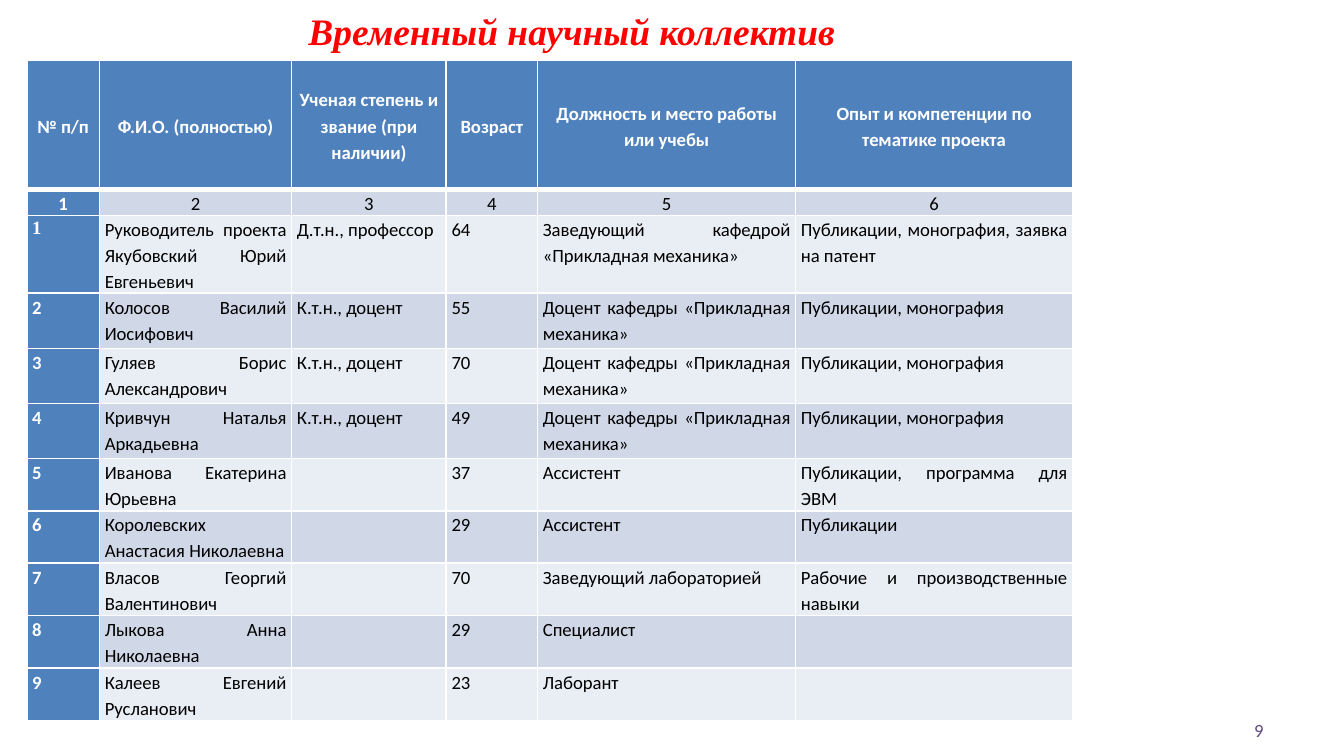
"""Build the slide that lists the members of a temporary research team."""
import pptx
import pptx.dml.color
import pptx.enum.text
import pptx.oxml
import pptx.oxml.ns
import pptx.util
from pptx.util import Inches

ALIGN = pptx.enum.text.PP_ALIGN
MIDDLE = pptx.enum.text.MSO_ANCHOR.MIDDLE
TOP = pptx.enum.text.MSO_ANCHOR.TOP
WHITE, BLACK, RED, PURPLE = "FFFFFF", "000000", "FF0000", "604A7B"
BLUE = "4F81BD"
BANDS = ["E9EDF4", "D0D8E8"]

SLIDE_WIDTH = 10
SLIDE_HEIGHT = SLIDE_WIDTH * 9 / 16
COLUMN_WIDTHS = [0.54, 1.43, 1.15, 0.68, 1.92, 2.06]
ROW_HEIGHTS = [0.96, 0.19, 0.58] + [0.41] * 3 + [0.39] * 5
HEADINGS = [
    "№ п/п",
    "Ф.И.О. (полностью)",
    "Ученая степень и звание (при наличии)",
    "Возраст",
    "Должность и место работы или учебы",
    "Опыт и компетенции по тематике проекта",
]
ASSOCIATE = "Доцент кафедры «Прикладная механика»"
PAPERS = "Публикации, монография"
MEMBERS = [
    ["Руководитель проекта Якубовский Юрий Евгеньевич", "Д.т.н., профессор", "64",
     "Заведующий кафедрой «Прикладная механика»", "Публикации, монография, заявка на патент"],
    ["Колосов Василий Иосифович", "К.т.н., доцент", "55", ASSOCIATE, PAPERS],
    ["Гуляев Борис Александрович", "К.т.н., доцент", "70", ASSOCIATE, PAPERS],
    ["Кривчун Наталья Аркадьевна", "К.т.н., доцент", "49", ASSOCIATE, PAPERS],
    ["Иванова Екатерина Юрьевна", "", "37", "Ассистент", "Публикации, программа для ЭВМ"],
    ["Королевских Анастасия Николаевна", "", "29", "Ассистент", "Публикации"],
    ["Власов Георгий Валентинович", "", "70", "Заведующий лабораторией",
     "Рабочие и производственные навыки"],
    ["Лыкова Анна Николаевна", "", "29", "Специалист", ""],
    ["Калеев Евгений Русланович", "", "23", "Лаборант", ""],
]


def rgb(value):
    """Turn a hex string into a colour."""
    return pptx.dml.color.RGBColor.from_string(value)


def style_paragraph(para, size, color, align, face="Calibri", bold=False, italic=False):
    """Set the alignment and font of a paragraph."""
    para.alignment = align
    font = para.font
    font.name, font.size = face, pptx.util.Pt(size)
    font.bold, font.italic = bold, italic
    font.color.rgb = rgb(color)


def add_text(slide, text, left, top, width, height, **style):
    """Add a vertically centred one-line text box."""
    box = slide.shapes.add_textbox(Inches(left), Inches(top), Inches(width), Inches(height))
    frame = box.text_frame
    frame.word_wrap = True
    frame.vertical_anchor = MIDDLE
    frame.text = text
    style_paragraph(frame.paragraphs[0], **style)


def set_borders(cell, bottom):
    """Draw white cell borders, with the bottom one of a given width in points."""
    properties = cell._tc.get_or_add_tcPr()
    for side, points in {"L": 1, "R": 1, "T": 1, "B": bottom}.items():
        properties.append(pptx.oxml.parse_xml(
            f'<a:ln{side} {pptx.oxml.ns.nsdecls("a")} w="{pptx.util.Pt(points)}">'
            f'<a:solidFill><a:srgbClr val="{WHITE}"/></a:solidFill></a:ln{side}>'))


def fill_cell(cell, text, row, column):
    """Write and style one cell by its place in the table."""
    heading, numbered = row == 0, row == 1
    accent = heading or column == 0
    set_borders(cell, 3 if heading else 1)
    cell.fill.solid()
    cell.fill.fore_color.rgb = rgb(BLUE if accent else BANDS[row % 2])
    cell.margin_left = cell.margin_right = Inches(0.04)
    cell.margin_top = cell.margin_bottom = 0
    cell.vertical_anchor = MIDDLE if heading else TOP
    cell.text = text
    para = cell.text_frame.paragraphs[0]
    para.line_spacing = 1.15
    style_paragraph(
        para, 10, WHITE if accent else BLACK,
        ALIGN.CENTER if heading or numbered else ALIGN.JUSTIFY,
        face="Times New Roman" if (row, column) == (2, 0) else "Calibri", bold=accent)


def add_team_table(slide):
    """Add the table of team members."""
    numbers = [str(number) for number in range(1, len(HEADINGS) + 1)]
    members = [[str(number), *member] for number, member in enumerate(MEMBERS, 1)]
    rows = [HEADINGS, numbers, *members]
    table = slide.shapes.add_table(
        len(rows), len(HEADINGS), Inches(0.2), Inches(0.45),
        Inches(sum(COLUMN_WIDTHS)), Inches(sum(ROW_HEIGHTS))).table
    for column, width in zip(table.columns, COLUMN_WIDTHS):
        column.width = Inches(width)
    for row, height in zip(table.rows, ROW_HEIGHTS):
        row.height = Inches(height)
    for row, texts in enumerate(rows):
        for column, text in enumerate(texts):
            fill_cell(table.cell(row, column), text, row, column)


def main():
    """Build and save the deck."""
    deck = pptx.Presentation()
    deck.slide_width, deck.slide_height = Inches(SLIDE_WIDTH), Inches(SLIDE_HEIGHT)
    slide = deck.slides.add_slide(deck.slide_layouts[6])
    add_text(slide, "9", 7.17, 5.28, 2.33, 0.3, size=10, color=PURPLE, align=ALIGN.RIGHT)
    add_text(slide, "Временный научный коллектив", 1.42, 0, 5.67, 0.45, size=20, color=RED,
             align=ALIGN.CENTER, face="Times New Roman", bold=True, italic=True)
    add_team_table(slide)
    deck.save("out.pptx")


if __name__ == "__main__":
    main()
